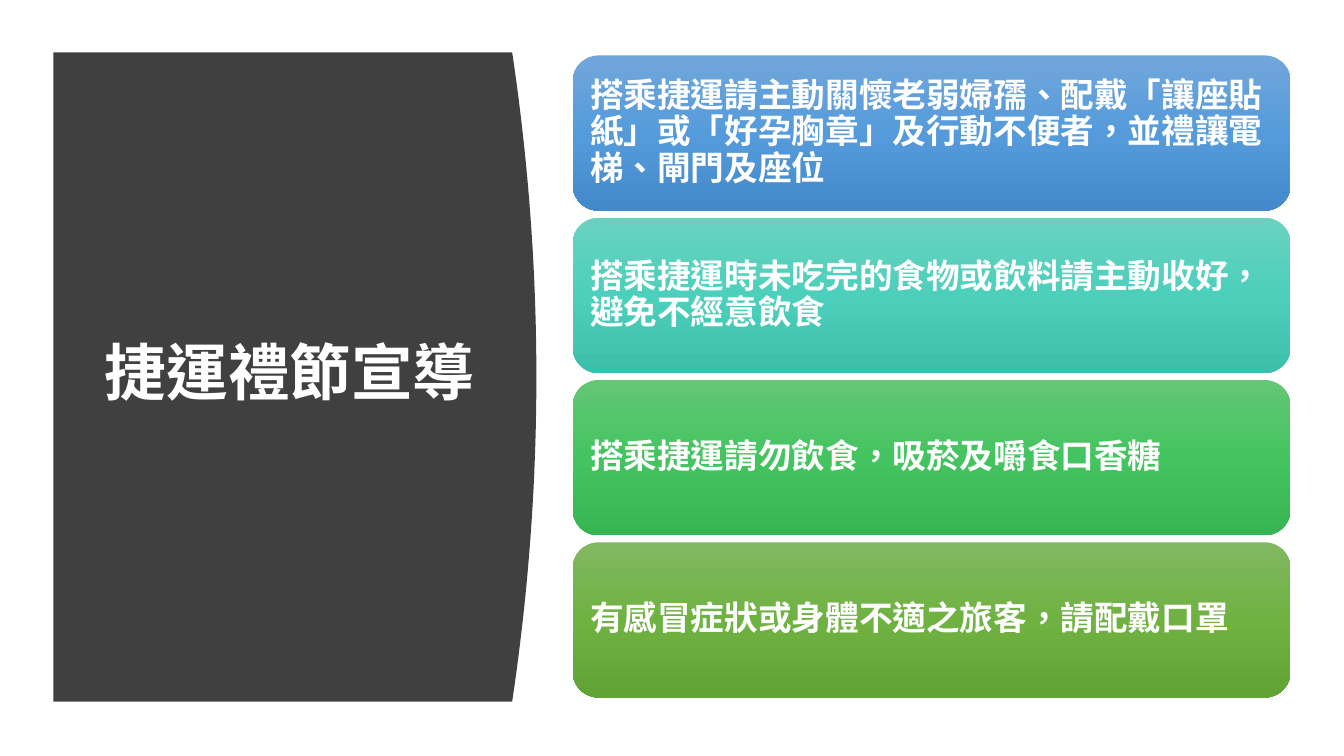
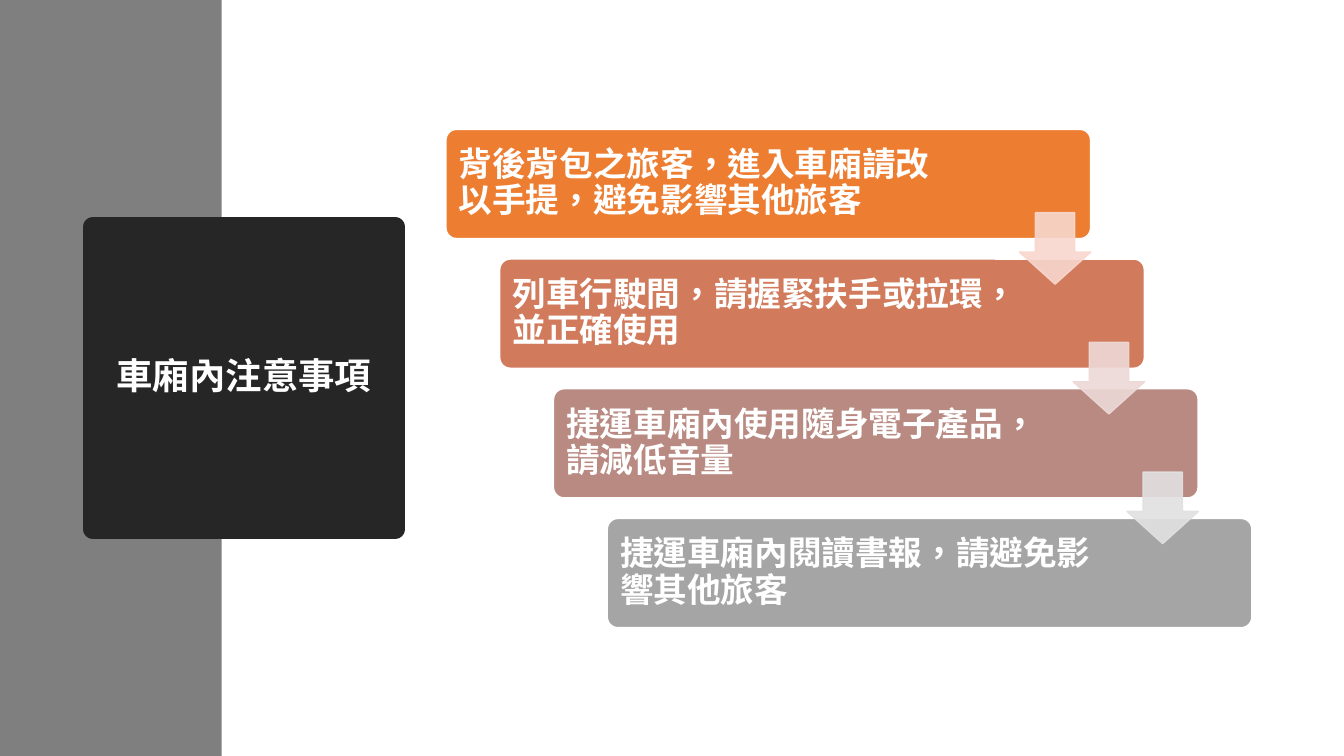
from copy import deepcopy

from lxml import etree
from pptx import Presentation
from pptx.dml.color import RGBColor
from pptx.enum.shapes import MSO_SHAPE
from pptx.enum.text import MSO_ANCHOR, MSO_AUTO_SIZE, PP_ALIGN
from pptx.oxml.ns import qn
from pptx.util import Inches, Pt

RECTANGLE = MSO_SHAPE.RECTANGLE
ROUNDED = MSO_SHAPE.ROUNDED_RECTANGLE
DOWN_ARROW = MSO_SHAPE.DOWN_ARROW
MIDDLE = MSO_ANCHOR.MIDDLE
NO_AUTOFIT = MSO_AUTO_SIZE.NONE
LEFT, CENTER = PP_ALIGN.LEFT, PP_ALIGN.CENTER

WHITE = "FFFFFF"
CHARCOAL = "404040"
BLACK = "262626"
GRAY = "7F7F7F"
TITLE_FONT = "Noto Sans CJK SC"
BODY_FONT = "Calibri"
TITLE_ONLY = 5

ETIQUETTE = [
    ("搭乘捷運請主動關懷老弱婦孺、配戴「讓座貼紙」或「好孕胸章」及行動不便者，並禮讓電梯、閘門及座位",
     ("71A6DB", "559BDB", "448ACA")),
    ("搭乘捷運時未吃完的食物或飲料請主動收好，避免不經意飲食",
     ("6AD1C0", "4CD0BC", "3CC0AC")),
    ("搭乘捷運請勿飲食，吸菸及嚼食口香糖",
     ("64C677", "44C460", "36B552")),
    ("有感冒症狀或身體不適之旅客，請配戴口罩",
     ("81B861", "6FB242", "62A336")),
]
CABIN_RULES = [
    ("背後背包之旅客，進入車廂請改以手提，避免影響其他旅客", "ED7D31"),
    ("列車行駛間，請握緊扶手或拉環，並正確使用", "D17B5C"),
    ("捷運車廂內使用隨身電子產品，請減低音量", "B98A82"),
    ("捷運車廂內閱讀書報，請避免影響其他旅客", "A5A5A5"),
]
ARROW_COLORS = ["F8D7CE", "EDD9D7", "E1E1E1"]


def rgb(value):
    return RGBColor.from_string(value)


def set_text(shape, text, size=24, font=BODY_FONT, align=LEFT, insets=(0.1, 0.1, 0.1, 0.1)):
    frame = shape.text_frame
    frame.word_wrap = True
    frame.auto_size = NO_AUTOFIT
    frame.vertical_anchor = MIDDLE
    (frame.margin_left, frame.margin_top,
     frame.margin_right, frame.margin_bottom) = map(Inches, insets)
    paragraph = frame.paragraphs[0]
    paragraph.alignment = align
    paragraph.line_spacing = 0.9
    run = paragraph.add_run()
    run.text = text
    run.font.size = Pt(size)
    run.font.bold = True
    run.font.color.rgb = rgb(WHITE)
    run.font.name = font
    properties = run._r.get_or_add_rPr()
    properties.set("lang", "zh-TW")
    etree.SubElement(properties, qn("a:ea"), typeface=font)


def paint(shape, fill, line=None, width=1):
    shape.fill.solid()
    shape.fill.fore_color.rgb = rgb(fill)
    if line:
        shape.line.color.rgb = rgb(line)
        shape.line.width = Pt(width)
    else:
        shape.line.fill.background()


def paint_gradient(shape, colors):
    shape.line.fill.background()
    shape.fill.gradient()
    shape.fill.gradient_angle = 270
    stop_list = shape._element.spPr.find(".//" + qn("a:gsLst"))
    stop_list.insert(1, deepcopy(stop_list[0]))
    for stop, position, color in zip(shape.fill.gradient_stops, (0, 0.5, 1), colors):
        stop.position = position
        stop.color.rgb = rgb(color)


def set_opacity(shape, percent):
    for color in shape._element.spPr.iter(qn("a:srgbClr")):
        etree.SubElement(color, qn("a:alpha"), val=str(percent * 1000))


def add_block(slide, kind, box, adjustments=()):
    block = slide.shapes.add_shape(kind, *map(Inches, box))
    block.shadow.inherit = False
    for index, value in enumerate(adjustments):
        block.adjustments[index] = value
    return block


def place_title(slide, text, box, size, align):
    title = slide.shapes.title
    title.left, title.top, title.width, title.height = map(Inches, box)
    set_text(title, text, size=size, font=TITLE_FONT, align=align, insets=(0.1, 0.05, 0.1, 0.05))
    slide.shapes._spTree.append(title._element)
    return title


def add_curved_panel(slide, box, bulge=0.24, steps=40):
    left, top, width, height = box
    edge = left + width - bulge
    curve = []
    for step in range(steps + 1):
        part = step / steps
        curve.append((Inches(edge + bulge * 4 * part * (1 - part)), Inches(top + height * part)))
    builder = slide.shapes.build_freeform(Inches(left), Inches(top), scale=1.0)
    builder.add_line_segments(curve + [(Inches(left), Inches(top + height))], close=True)
    panel = builder.convert_to_shape()
    panel.shadow.inherit = False
    paint(panel, CHARCOAL)


def add_card_stack(slide, box, cards, gap=0.07):
    left, top, width, height = box
    card_height = (height - gap * (len(cards) - 1)) / len(cards)
    for index, (text, colors) in enumerate(cards):
        card_top = top + index * (card_height + gap)
        card = add_block(slide, ROUNDED, (left, card_top, width, card_height))
        paint_gradient(card, colors)
        set_text(card, text)


def add_staircase(slide, box, rules, step_width=6.4, step_height=1.09, arrow_size=0.71):
    left, top, width, height = box
    shift = (width - step_width) / (len(rules) - 1)
    drop = (height - step_height) / (len(rules) - 1)
    for index, (text, color) in enumerate(rules):
        step_box = (left + index * shift, top + index * drop, step_width, step_height)
        step = add_block(slide, ROUNDED, step_box, [0.1])
        paint(step, color, WHITE, 1.5)
        set_text(step, text, insets=(0.1, 0.1, 1.32, 0.1))
    for index, color in enumerate(ARROW_COLORS):
        arrow_left = left + index * shift + step_width - arrow_size
        arrow_top = top + index * drop + 0.83
        arrow = add_block(slide, DOWN_ARROW, (arrow_left, arrow_top, arrow_size, arrow_size))
        arrow.adjustments[0] = 0.55
        arrow.adjustments[1] = 0.45
        paint(arrow, color, color)
        set_opacity(arrow, 90)


def build_etiquette_slide(deck):
    slide = deck.slides.add_slide(deck.slide_layouts[TITLE_ONLY])
    add_curved_panel(slide, (0.53, 0.52, 4.79, 6.44))
    place_title(slide, "捷運禮節宣導", (0.94, 1.11, 4.27, 5.24), 44, LEFT)
    add_card_stack(slide, (5.68, 0.55, 7.12, 6.37), ETIQUETTE)


def build_cabin_slide(deck):
    slide = deck.slides.add_slide(deck.slide_layouts[TITLE_ONLY])
    paint(add_block(slide, RECTANGLE, (0, 0, 2.2, 7.5)), GRAY)
    title = place_title(slide, "車廂內注意事項", (0.92, 2.25, 3, 3), 26, CENTER)
    paint(title, BLACK, BLACK, 13.75)
    add_staircase(slide, (4.42, 1.28, 8, 4.95), CABIN_RULES)


def main():
    deck = Presentation()
    deck.slide_width = Inches(13.33)
    deck.slide_height = Inches(7.5)
    build_etiquette_slide(deck)
    build_cabin_slide(deck)
    deck.save("out.pptx")


if __name__ == "__main__":
    main()
